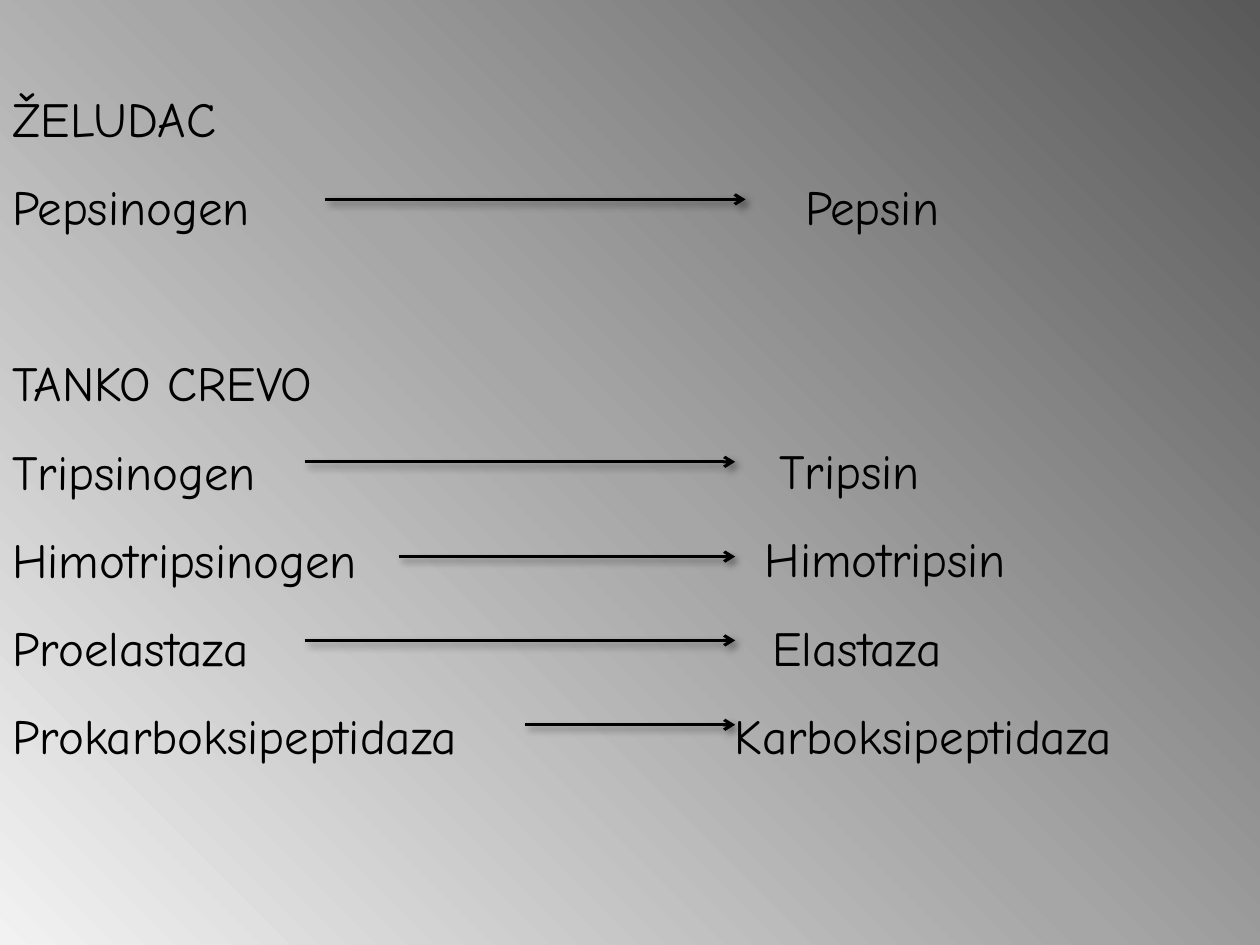
from lxml import etree
from pptx import Presentation
from pptx.dml.color import RGBColor
from pptx.enum import shapes, text
from pptx.oxml import parse_xml
from pptx.oxml.ns import nsdecls, qn
from pptx.util import Cm, Pt

THEME = {
    "font": "Comic Neue", "size": Pt(28), "ink": RGBColor(0, 0, 0),
    "line": Pt(1.75), "leading": 1.5, "pitch": Pt(50.3),
    "stops": [(0, "595959"), (50, "A6A6A6"), (100, "F2F2F2")],
}

# Each organ: (precursor, enzyme, enzyme x, arrow start x, arrow end x, arrow y), in cm
ORGANS = [
    ("ŽELUDAC", [
        ("Pepsinogen", "Pepsin", 16.23, 6.56, 15.03, 4.02),
    ]),
    ("TANKO CREVO", [
        ("Tripsinogen", "Tripsin", 15.71, 6.14, 14.82, 9.31),
        ("Himotripsinogen", "Himotripsin", 15.42, 8.04, 14.82, 11.22),
        ("Proelastaza", "Elastaza", 15.57, 6.14, 14.82, 12.91),
        ("Prokarboksipeptidaza", "Karboksipeptidaza", 14.81, 10.58, 14.82, 14.61),
    ]),
]
INSET = 0.25
TOP, HEIGHT, WIDTH = Cm(1.06), Cm(14.63), Cm(25.4)
SPLIT = 14.81


def paint(slide):
    fill = slide.background.fill
    fill.gradient()
    fill.gradient_angle = 225
    stops = slide.background._cSld.find(".//" + qn("a:gsLst"))
    for old in list(stops):
        stops.remove(old)
    for pos, tone in THEME["stops"]:
        stop = etree.SubElement(stops, qn("a:gs"), pos=str(pos * 1000))
        etree.SubElement(stop, qn("a:srgbClr"), val=tone)


def place(holder, left, top, width, height):
    holder.left, holder.top, holder.width, holder.height = left, top, width, height
    frame = holder.text_frame
    frame.word_wrap = True
    frame.auto_size = text.MSO_AUTO_SIZE.NONE
    frame.vertical_anchor = text.MSO_ANCHOR.TOP
    frame.margin_left = frame.margin_right = Cm(INSET)


def fill_list(frame, items):
    """Write (words, indent, space before) items as unbulleted paragraphs."""
    for i, (words, indent, gap) in enumerate(items):
        para = frame.add_paragraph() if i else frame.paragraphs[0]
        para.text = words
        props = para._p.get_or_add_pPr()
        props.set("marL", str(Cm(indent)))
        props.set("indent", "0")
        etree.SubElement(props, qn("a:buNone"))
        para.line_spacing = THEME["leading"]
        para.space_before = gap
        for run in para.runs:
            run.font.name = THEME["font"]
            run.font.size = THEME["size"]
            run.font.color.rgb = THEME["ink"]


def arrow(slide, start, end, y):
    line = slide.shapes.add_connector(
        shapes.MSO_CONNECTOR.STRAIGHT, Cm(start), Cm(y), Cm(end), Cm(y))
    line.line.color.rgb = THEME["ink"]
    line.line.width = THEME["line"]
    etree.SubElement(line.line._get_or_add_ln(), qn("a:tailEnd"), type="arrow")
    line._element.spPr.append(parse_xml(
        f'<a:effectLst {nsdecls("a")}>'
        f'<a:outerShdw blurRad="{Pt(4)}" dist="{Pt(3)}" dir="2700000" '
        'algn="tl" rotWithShape="0"><a:srgbClr val="000000">'
        '<a:alpha val="40000"/></a:srgbClr></a:outerShdw></a:effectLst>'))


def main():
    deck = Presentation()
    deck.slide_width, deck.slide_height = WIDTH, Cm(19.05)
    slide = deck.slides.add_slide(deck.slide_layouts[3])
    paint(slide)
    title, sources, enzymes = slide.placeholders
    title._element.getparent().remove(title._element)
    pitch, edge = THEME["pitch"], Cm(SPLIT - INSET)
    place(sources, Cm(0), TOP, edge, HEIGHT)
    place(enzymes, edge, TOP + pitch, WIDTH - edge, HEIGHT - pitch)

    left, right = [], []
    for organ, rows in ORGANS:
        left.append((organ, 0, pitch if left else 0))
        for i, (source, enzyme, x, start, end, y) in enumerate(rows):
            left.append((source, 0, 0))
            skip = 2 * pitch if right and i == 0 else 0
            right.append((enzyme, x - SPLIT, skip))
            arrow(slide, start, end, y)
    fill_list(sources.text_frame, left)
    fill_list(enzymes.text_frame, right)
    deck.save("out.pptx")


if __name__ == "__main__":
    main()
